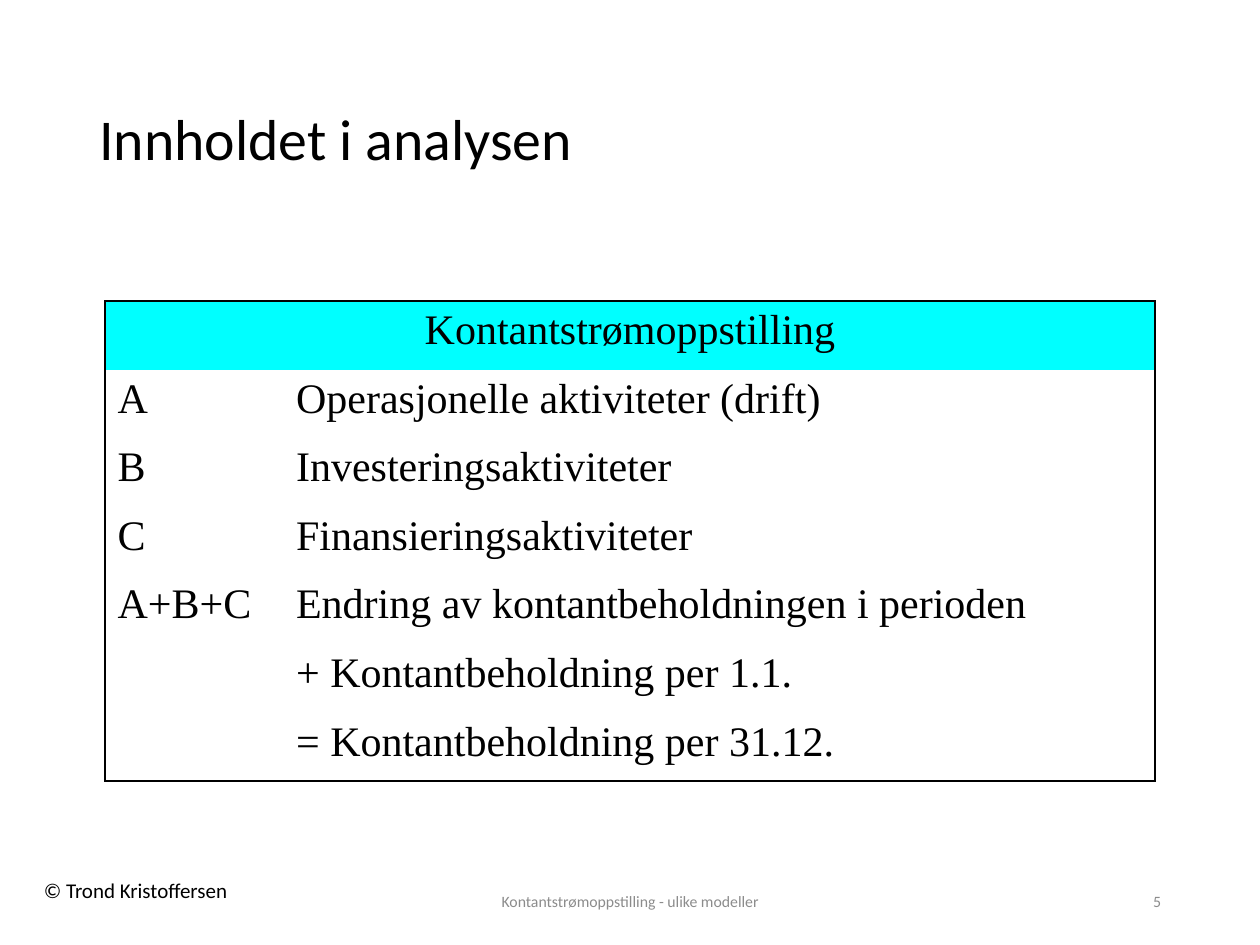
"""Build the slide on the contents of a cash flow statement."""
import pptx
import pptx.util
import pptx.dml.color
import pptx.enum.text
import pptx.oxml

Pt = pptx.util.Pt
RGB = pptx.dml.color.RGBColor
Align = pptx.enum.text.PP_ALIGN
Anchor = pptx.enum.text.MSO_ANCHOR
Fit = pptx.enum.text.MSO_AUTO_SIZE

BLACK = RGB(0, 0, 0)
GREY = RGB(0x8C, 0x8C, 0x8C)
CYAN = RGB(0, 0xFF, 0xFF)
SANS, SERIF = "Calibri", "Times New Roman"

TITLE = "Innholdet i analysen"
ROWS = [
    ("Kontantstrømoppstilling", ""),
    ("A", "Operasjonelle aktiviteter (drift)"),
    ("B", "Investeringsaktiviteter"),
    ("C", "Finansieringsaktiviteter"),
    ("A+B+C", "Endring av kontantbeholdningen i perioden"),
    ("", "+ Kontantbeholdning per 1.1."),
    ("", "= Kontantbeholdning per 31.12."),
]
COLS = (102, 498)
LEFT, TOP, HIGH = 60, 172, 274.4
NOTES = [
    ("© Trond Kristoffersen", (18, 498.2, 122.4, 21.6), 12, BLACK, Align.LEFT, Anchor.TOP, False),
    ("Kontantstrømoppstilling - ulike modeller", (238.5, 500.5, 243, 28.8), 9, GREY,
     Align.CENTER, Anchor.MIDDLE, True),
    ("5", (508.5, 500.5, 162, 28.8), 9, GREY, Align.RIGHT, Anchor.MIDDLE, True),
]


def style(para, face, size, color, align=Align.LEFT):
    """Format one paragraph."""
    para.alignment = align
    para.font.name, para.font.size = face, Pt(size)
    para.font.color.rgb = color


def border(cell, sides):
    """Draw the named sides of a cell in black and hide the others."""
    props = cell._tc.get_or_add_tcPr()
    space = 'xmlns:a="http://schemas.openxmlformats.org/drawingml/2006/main"'
    solid = f'<a:solidFill><a:srgbClr val="{BLACK}"/></a:solidFill>'
    for spot, side in enumerate("LRTB"):
        ink = solid if side in sides else "<a:noFill/>"
        props.insert(spot, pptx.oxml.parse_xml(
            f'<a:ln{side} {space} w="{Pt(1)}">{ink}</a:ln{side}>'))


def add_title(slide):
    """Fill and place the title."""
    title = slide.shapes.title
    title.left, title.top, title.width, title.height = map(Pt, (49.5, 28.8, 621, 104.4))
    frame = title.text_frame
    frame.text = TITLE
    frame.auto_size = Fit.NONE
    frame.vertical_anchor = Anchor.MIDDLE
    para = frame.paragraphs[0]
    style(para, SANS, 33, BLACK)
    para.line_spacing = 0.9


def add_grid(slide):
    """Add the statement as a table with an outer frame."""
    last = len(ROWS) - 1
    table = slide.shapes.add_table(
        len(ROWS), len(COLS), Pt(LEFT), Pt(TOP), Pt(sum(COLS)), Pt(HIGH)).table
    table.first_row = table.horz_banding = False
    for col, width in zip(table.columns, COLS):
        col.width = Pt(width)
    for i, row in enumerate(ROWS):
        for j, text in enumerate(row):
            cell = table.cell(i, j)
            cell.text = text
            style(cell.text_frame.paragraphs[0], SERIF, 24, BLACK,
                  Align.LEFT if i else Align.CENTER)
            if i:
                cell.fill.background()
            else:
                cell.fill.solid()
                cell.fill.fore_color.rgb = CYAN
            sides = ("L" if j == 0 else "R") + ("B" if i == last else "")
            border(cell, sides if i else "LRT")
    table.cell(0, 0).merge(table.cell(0, 1))


def add_note(slide, text, box, size, color, align, anchor, wrap):
    """Add one line of footer text."""
    frame = slide.shapes.add_textbox(*map(Pt, box)).text_frame
    frame.text = text
    frame.word_wrap = wrap
    frame.vertical_anchor = anchor
    style(frame.paragraphs[0], SANS, size, color, align)


def main():
    """Build and save the deck."""
    deck = pptx.Presentation()
    deck.slide_width, deck.slide_height = Pt(720), Pt(540)
    slide = deck.slides.add_slide(deck.slide_layouts[5])
    add_title(slide)
    add_grid(slide)
    for note in NOTES:
        add_note(slide, *note)
    deck.save("out.pptx")


if __name__ == "__main__":
    main()
